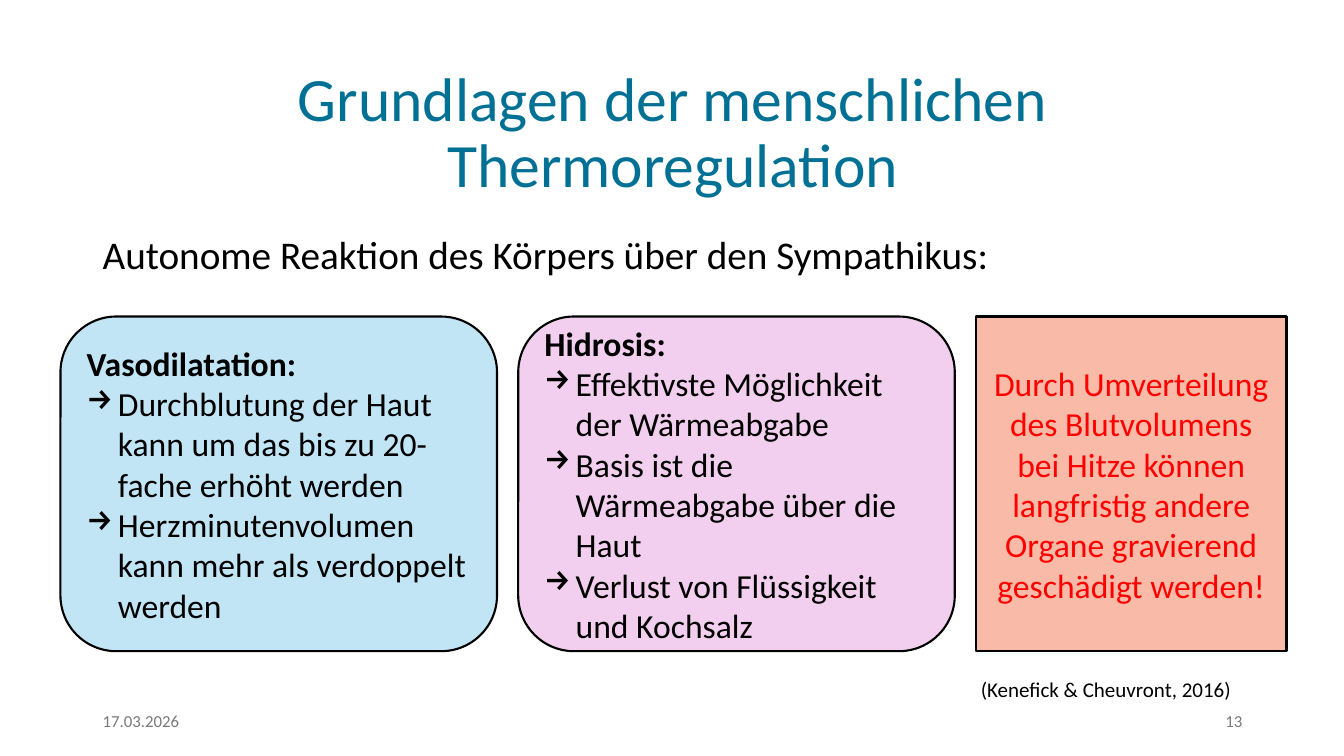
from dataclasses import dataclass

from lxml import etree
from pptx import Presentation
from pptx.dml.color import RGBColor
from pptx.enum.shapes import MSO_SHAPE
from pptx.enum.text import MSO_ANCHOR, PP_ALIGN
from pptx.oxml.ns import qn
from pptx.util import Inches, Pt

ROUND, RECT = MSO_SHAPE.ROUNDED_RECTANGLE, MSO_SHAPE.RECTANGLE
TOP, MID = MSO_ANCHOR.TOP, MSO_ANCHOR.MIDDLE
LEFT, MIDDLE, RIGHT = PP_ALIGN.LEFT, PP_ALIGN.CENTER, PP_ALIGN.RIGHT
FONT = "Calibri"
BLACK, GREY, RED, TEAL = "000000", "797979", "FF0000", "007094"
CARD_TOP, CARD_HIGH, CARD_GAP = 3.14, 3.32, 0.21
INDENT = 0.31


@dataclass
class Label:
    text: str
    box: tuple[float, float, float, float]
    size: int
    color: str = BLACK
    align: PP_ALIGN = LEFT
    anchor: MSO_ANCHOR = TOP
    lead: float = 1.0
    inset: float = 0.1


@dataclass
class Card:
    width: float
    fill: str
    head: str = ""
    points: tuple[str, ...] = ()
    text: str = ""
    form: MSO_SHAPE = ROUND


LABELS = [
    Label("Grundlagen der menschlichen Thermoregulation",
          (0.55, 0.61, 12.25, 1.45), 44, TEAL, MIDDLE, MID, 0.9, 0.2),
    Label("Autonome Reaktion des Körpers über den Sympathikus:",
          (0.92, 2.33, 11.5, 0.51), 28, lead=0.8),
    Label("17.03.2026", (0.92, 6.95, 3, 0.4), 12, GREY, anchor=MID),
    Label("13", (9.42, 6.95, 3, 0.4), 12, GREY, RIGHT, MID),
    Label("(Kenefick & Cheuvront, 2016)", (9.63, 6.66, 2.75, 0.35), 15),
]

CARDS = [
    Card(4.33, "C1E5F5", "Vasodilatation:", (
        "Durchblutung der Haut kann um das bis zu 20-fache erhöht werden",
        "Herzminutenvolumen kann mehr als verdoppelt werden")),
    Card(4.33, "F2CFEE", "Hidrosis:", (
        "Effektivste Möglichkeit der Wärmeabgabe",
        "Basis ist die Wärmeabgabe über die Haut",
        "Verlust von Flüssigkeit und Kochsalz")),
    Card(3.08, "FABAA8", form=RECT,
         text="Durch Umverteilung des Blutvolumens bei Hitze können langfristig "
              "andere Organe gravierend geschädigt werden!"),
]


def paint(target, color: str) -> None:
    target.rgb = RGBColor.from_string(color)


def write(para, text: str, size: int, color: str, align: PP_ALIGN = LEFT,
          bold: bool = False) -> None:
    para.alignment = align
    run = para.add_run()
    run.text = text
    style = {"name": FONT, "size": Pt(size), "bold": bold}
    for key, value in style.items():
        setattr(run.font, key, value)
    run.font.fill.solid()
    paint(run.font.fill.fore_color, color)


def add_arrow(para) -> None:
    """Give the paragraph an arrow bullet with a hanging indent."""
    props = para._p.get_or_add_pPr()
    props.set("marL", str(Inches(INDENT)))
    props.set("indent", str(-Inches(INDENT)))
    etree.SubElement(props, qn("a:buChar")).set("char", "→")


def add_label(slide, label: Label) -> None:
    frame = slide.shapes.add_textbox(*map(Inches, label.box)).text_frame
    style = {"word_wrap": True, "vertical_anchor": label.anchor,
             "margin_left": Inches(label.inset),
             "margin_right": Inches(label.inset)}
    for key, value in style.items():
        setattr(frame, key, value)
    para = frame.paragraphs[0]
    para.line_spacing = label.lead
    write(para, label.text, label.size, label.color, label.align)


def add_card(slide, card: Card, left: float) -> None:
    box = (left, CARD_TOP, card.width, CARD_HIGH)
    shape = slide.shapes.add_shape(card.form, *map(Inches, box))
    shape.shadow.inherit = False
    shape.fill.solid()
    paint(shape.fill.fore_color, card.fill)
    paint(shape.line.color, BLACK)
    shape.line.width = Pt(1.5)
    frame = shape.text_frame
    frame.word_wrap = True
    frame.vertical_anchor = MID
    first = frame.paragraphs[0]
    if card.head:
        write(first, card.head, 24, BLACK, bold=True)
    else:
        write(first, card.text, 24, RED, MIDDLE)
    for point in card.points:
        para = frame.add_paragraph()
        add_arrow(para)
        write(para, point, 24, BLACK)


def main() -> None:
    deck = Presentation()
    deck.slide_width, deck.slide_height = Inches(13.33), Inches(7.5)
    slide = deck.slides.add_slide(deck.slide_layouts[6])
    for label in LABELS:
        add_label(slide, label)
    left = 0.6
    for card in CARDS:
        add_card(slide, card, left)
        left += card.width + CARD_GAP
    deck.save("out.pptx")


if __name__ == "__main__":
    main()
